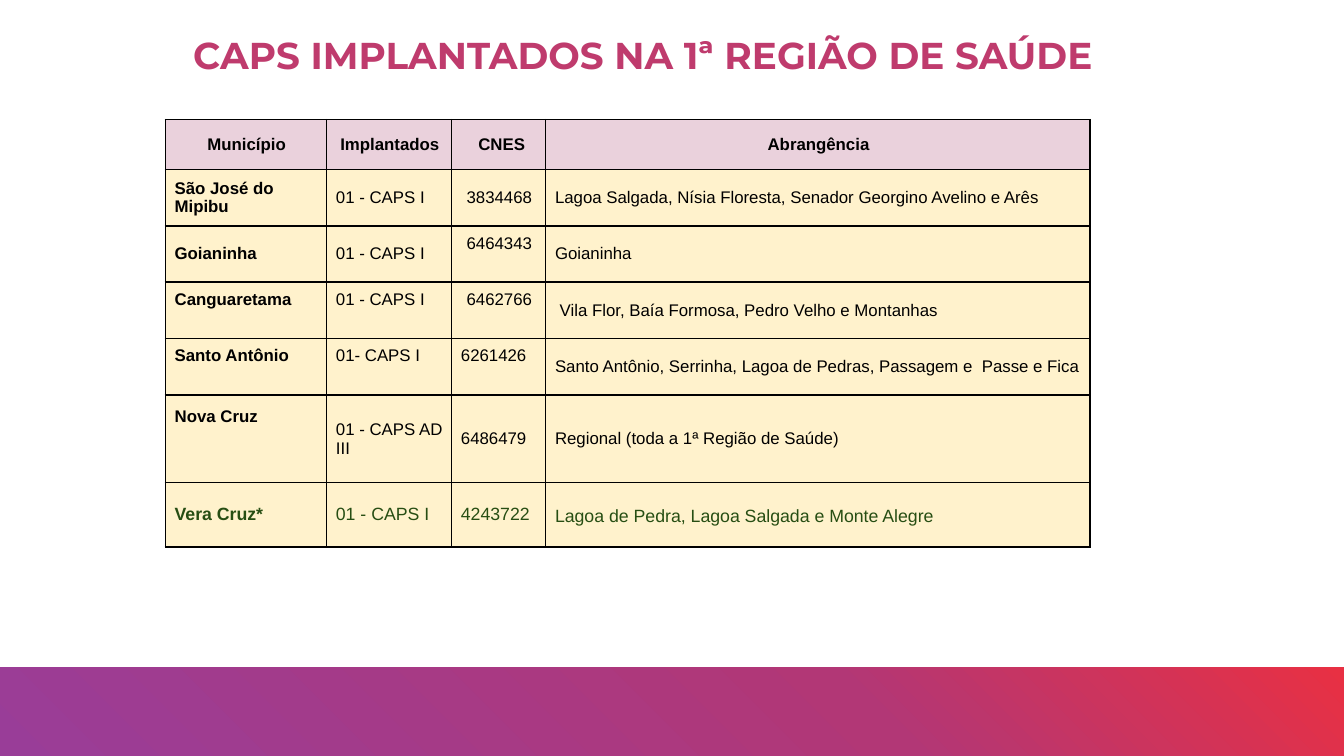
from copy import deepcopy
from dataclasses import dataclass

from lxml import etree
from pptx import Presentation
from pptx.dml.color import RGBColor
from pptx.enum.shapes import MSO_SHAPE
from pptx.enum.text import MSO_ANCHOR, PP_ALIGN
from pptx.oxml.ns import qn
from pptx.util import Inches, Pt

RECTANGLE = MSO_SHAPE.RECTANGLE
TOP, MIDDLE = MSO_ANCHOR.TOP, MSO_ANCHOR.MIDDLE
LEFT, CENTER = PP_ALIGN.LEFT, PP_ALIGN.CENTER


@dataclass(frozen=True)
class Theme:
    title: str = "BF3B6D"
    ink: str = "000000"
    pending: str = "274E13"
    header: str = "EAD1DC"
    body: str = "FFF2CC"
    band: tuple = ((0, "993D98"), (0.64, "B23776"), (1, "E83043"))
    title_font: str = "Montserrat"
    table_font: str = "Arial"
    title_size: float = 20
    table_size: float = 9
    pending_size: float = 9.5
    border: float = 1
    side_inset: float = 0.07
    inset: float = 0.06


THEME = Theme()

SLIDE_WIDTH = 10
SLIDE_HEIGHT = SLIDE_WIDTH * 9 / 16
COLUMN_WIDTHS = (1.2, 0.93, 0.7, 4.05)
ROW_HEIGHTS = (0.37, 0.42, 0.42, 0.42, 0.42, 0.65, 0.48)
ROWS = (
    ("Município", "Implantados", " CNES", "Abrangência"),
    ("São José do Mipibu", "01 - CAPS I", "3834468",
     "Lagoa Salgada, Nísia Floresta, Senador Georgino Avelino e Arês"),
    ("Goianinha", "01 - CAPS I", "6464343", "Goianinha"),
    ("Canguaretama", "01 - CAPS I", "6462766",
     " Vila Flor, Baía Formosa, Pedro Velho e Montanhas"),
    ("Santo Antônio", "01- CAPS I", "6261426",
     "Santo Antônio, Serrinha, Lagoa de Pedras, Passagem e  Passe e Fica"),
    ("Nova Cruz", "01 - CAPS AD III", "6486479",
     "Regional (toda a 1ª Região de Saúde)"),
    ("Vera Cruz*", "01 - CAPS I", "4243722",
     "Lagoa de Pedra, Lagoa Salgada e Monte Alegre"),
)
TOP_COLUMNS = {2: (2,), 3: (0, 1, 2), 4: (0, 1, 2), 5: (0,)}
TOP_INSETS = {5: 0.09}
CENTERED_CNES_ROWS = (1, 2, 3)


def write_text(frame, text, *, font, size, color, bold=False, align=LEFT, spacing=None):
    frame.word_wrap = True
    para = frame.paragraphs[0]
    para.alignment = align
    para.line_spacing = spacing
    span = para.add_run()
    span.text = text
    span.font.name = font
    span.font.size = Pt(size)
    span.font.bold = bold
    span.font.color.rgb = RGBColor.from_string(color)


def set_borders(cell, color, width):
    properties = cell._tc.get_or_add_tcPr()
    for index, side in enumerate(("a:lnL", "a:lnR", "a:lnT", "a:lnB")):
        line = etree.Element(qn(side), w=str(Pt(width)))
        fill = etree.SubElement(line, qn("a:solidFill"))
        etree.SubElement(fill, qn("a:srgbClr"), val=color)
        properties.insert(index, line)


def add_band(page, left, top, width, height):
    band = page.shapes.add_shape(
        RECTANGLE, Inches(left), Inches(top), Inches(width), Inches(height))
    band.shadow.inherit = False
    band.line.fill.background()
    band.fill.gradient()
    band.fill.gradient_angle = 45
    stop_list = band._element.spPr.find(".//" + qn("a:gsLst"))
    stop_list.append(deepcopy(stop_list[-1]))
    for stop, (position, color) in zip(band.fill.gradient_stops, THEME.band):
        stop.position = position
        stop.color.rgb = RGBColor.from_string(color)


def add_title(page, left, top, width, height):
    box = page.shapes.add_textbox(
        Inches(left), Inches(top), Inches(width), Inches(height))
    frame = box.text_frame
    frame.margin_left = frame.margin_right = frame.margin_top = frame.margin_bottom = 0
    frame.vertical_anchor = MIDDLE
    write_text(frame, "CAPS IMPLANTADOS NA 1ª REGIÃO DE SAÚDE", font=THEME.title_font,
               size=THEME.title_size, color=THEME.title, bold=True, align=CENTER,
               spacing=1.75)


def fill_cell(cell, text, row, column):
    header, pending = row == 0, row == len(ROWS) - 1
    centered = header or (column == 2 and row in CENTERED_CNES_ROWS)
    raised = column in TOP_COLUMNS.get(row, ())
    cell.fill.solid()
    cell.fill.fore_color.rgb = RGBColor.from_string(THEME.header if header else THEME.body)
    set_borders(cell, THEME.ink, THEME.border)
    cell.margin_left = Inches(THEME.side_inset)
    cell.margin_right = cell.margin_bottom = Inches(THEME.inset)
    cell.margin_top = Inches(TOP_INSETS.get(row, THEME.inset) if raised else THEME.inset)
    cell.vertical_anchor = TOP if raised else MIDDLE
    write_text(cell.text_frame, text, font=THEME.table_font,
               size=THEME.pending_size if pending else THEME.table_size,
               color=THEME.pending if pending else THEME.ink,
               bold=header or column == 0, align=CENTER if centered else LEFT,
               spacing=1.15 if pending and column == 3 else None)


def add_caps_table(page, left, top):
    table = page.shapes.add_table(
        len(ROWS), len(COLUMN_WIDTHS), Inches(left), Inches(top),
        Inches(sum(COLUMN_WIDTHS)), Inches(sum(ROW_HEIGHTS))).table
    table.first_row = table.horz_banding = False
    for column, width in zip(table.columns, COLUMN_WIDTHS):
        column.width = Inches(width)
    for row, height in zip(table.rows, ROW_HEIGHTS):
        row.height = Inches(height)
    for row, texts in enumerate(ROWS):
        for column, text in enumerate(texts):
            fill_cell(table.cell(row, column), text, row, column)


def main():
    deck = Presentation()
    deck.slide_width, deck.slide_height = Inches(SLIDE_WIDTH), Inches(SLIDE_HEIGHT)
    page = deck.slides.add_slide(deck.slide_layouts[6])
    add_band(page, -0.01, 4.97, 10.01, 0.66)
    add_title(page, 0.3, 0.11, 8.97, 0.34)
    add_caps_table(page, 1.23, 0.89)
    deck.save("out.pptx")


if __name__ == "__main__":
    main()
